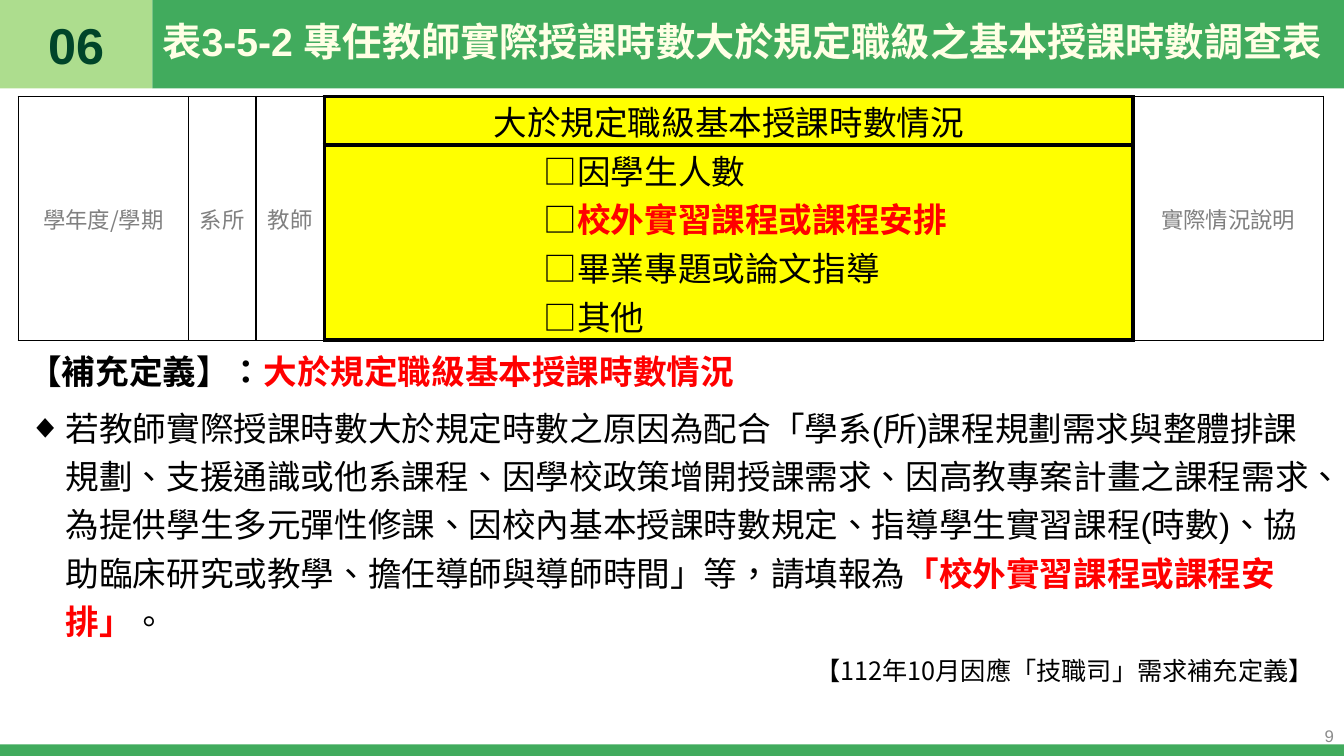
from dataclasses import dataclass
from pptx import Presentation
from pptx import util as u
from pptx.dml.color import RGBColor
from pptx.enum import shapes, text
from pptx.oxml import parse_xml
from pptx.oxml.ns import nsdecls, qn

Cm, Pt = u.Cm, u.Pt
ALIGN, ANCHOR = text.PP_ALIGN, text.MSO_ANCHOR


@dataclass(frozen=True)
class Theme:
    green: str = "41AB5D"
    pale: str = "ADDD8E"
    dark: str = "004529"
    cream: str = "FFFFE5"
    yellow: str = "FFFF00"
    red: str = "FF0000"
    black: str = "000000"
    gray: str = "808080"
    silver: str = "8C8C8C"
    latin: str = "Arial"
    cjk: str = "Noto Sans CJK SC"
    badge: int = 36
    title: int = 28
    body: int = 24
    note: int = 18
    small: int = 16
    page: int = 12


T = Theme()


def put(para, words, size, color, bold=False, face=T.cjk):
    """Add one run, with the same CJK face whatever the Latin one is."""
    run = para.add_run()
    run.text = words
    font = run.font
    font.size, font.bold, font.name = Pt(size), bold, face
    font.color.rgb = RGBColor.from_string(color)
    props = run._r.get_or_add_rPr()
    props.set("lang", "zh-TW")
    props.find(qn("a:latin")).addnext(
        parse_xml(f'<a:ea {nsdecls("a")} typeface="{T.cjk}"/>'))


def indent(para, left=0, hang=0, mark=None):
    """Set the margins in cm and the bullet sign, or none."""
    props = para._p.get_or_add_pPr()
    props.set("marL", str(Cm(left)))
    props.set("indent", str(Cm(-hang)))
    tag = f'buChar {nsdecls("a")} char="{mark}"' if mark else f'buNone {nsdecls("a")}'
    props.append(parse_xml(f"<a:{tag}/>"))


def place(shape, box, anchor):
    shape.left, shape.top, shape.width, shape.height = map(Cm, box)
    frame = shape.text_frame
    frame.word_wrap = True
    frame.auto_size = text.MSO_AUTO_SIZE.NONE
    frame.vertical_anchor = anchor
    return frame


def bar(slide, box, color, depth):
    rect = slide.shapes.add_shape(shapes.MSO_SHAPE.RECTANGLE, *map(Cm, box))
    rect.shadow.inherit = False
    rect.fill.solid()
    rect.fill.fore_color.rgb = RGBColor.from_string(color)
    rect.line.fill.background()
    slide.shapes._spTree.insert(2 + depth, rect._element)


def header(slide, box, title, badge):
    x, y, w, h = box
    left = 3.84
    tag, main = (x, y, left, h), (x + left, y, w - left, h)
    bar(slide, tag, T.pale, 0)
    bar(slide, main, T.green, 1)
    para = place(slide.shapes.title, main, ANCHOR.MIDDLE).paragraphs[0]
    para.alignment, para.line_spacing = ALIGN.LEFT, 0.9
    put(para, title, T.title, T.cream, True, T.latin)
    para = place(slide.placeholders[1], tag, ANCHOR.MIDDLE).paragraphs[0]
    para.alignment = ALIGN.CENTER
    indent(para)
    put(para, badge, T.badge, T.dark, True, T.latin)


def footer(slide, box, page):
    x, y, w, h = box
    bar(slide, box, T.green, 2)
    tall, wide = 1.02, 7.62
    area = (x + w - wide, y + h - tall, wide, tall)
    note = slide.shapes.add_textbox(*map(Cm, area))
    para = place(note, area, ANCHOR.MIDDLE).paragraphs[0]
    para.alignment = ALIGN.RIGHT
    put(para, page, T.page, T.silver, face=T.latin)


def edges(cell, widths):
    """Draw the left, right, top and bottom borders, in points."""
    props = cell._tc.get_or_add_tcPr()
    for spot, (side, width) in enumerate(zip("LRTB", widths)):
        props.insert(spot, parse_xml(
            f'<a:ln{side} {nsdecls("a")} w="{Pt(width)}"><a:solidFill>'
            f'<a:srgbClr val="{T.black}"/></a:solidFill></a:ln{side}>'))


def survey(slide, box, heads, options, key):
    """Table whose column number key is lit up and split in two rows."""
    widths, heights = (4.29, 1.7, 1.73, 20.37, 4.81), (1.22, 4.9)
    frame = slide.shapes.add_table(2, len(heads), *map(Cm, box))
    table = frame.table
    table.first_row = table.horz_banding = False
    for row, high in zip(table.rows, heights):
        row.height = Cm(high)
    for col, (head, wide) in enumerate(zip(heads, widths)):
        table.columns[col].width = Cm(wide)
        lit = col == key
        for row in range(2):
            cell = table.cell(row, col)
            cell.margin_left = cell.margin_right = Cm(0.05)
            cell.margin_top = cell.margin_bottom = 0
            cell.vertical_anchor = ANCHOR.MIDDLE
            if lit:
                cell.fill.solid()
                cell.fill.fore_color.rgb = RGBColor.from_string(T.yellow)
                edges(cell, (3, 3, 3, 3))
            else:
                cell.fill.background()
                edges(cell, (3 if col == key + 1 else 1,
                             3 if col == key - 1 else 1, 1, 1))
        top = table.cell(0, col)
        if not lit:
            top.merge(table.cell(1, col))
        para = top.text_frame.paragraphs[0]
        para.alignment = ALIGN.CENTER
        put(para, head, T.body if lit else T.small, T.black if lit else T.gray)
    body = table.cell(1, key).text_frame
    for spot, (label, hot) in enumerate(options):
        para = body.add_paragraph() if spot else body.paragraphs[0]
        indent(para, 5.47)
        put(para, "□", T.body, T.black)
        put(para, label, T.body, T.red if hot else T.black, hot)


def details(slide, box, lead, topic, reason, answer, note):
    frame = place(slide.placeholders[2], box, ANCHOR.TOP)
    first = frame.paragraphs[0]
    item, last = frame.add_paragraph(), frame.add_paragraph()
    for para, gap in ((first, 1.1), (item, 1.2), (last, 1.2)):
        para.space_before, para.line_spacing = Pt(6), gap
    indent(first)
    put(first, lead, T.body, T.black, True)
    put(first, topic, T.body, T.red, True)
    indent(item, 0.94, 0.94, "◆")
    put(item, reason, T.body, T.black, face=T.latin)
    put(item, answer, T.body, T.red, True)
    put(item, "。", T.body, T.black, face=T.latin)
    last.alignment = ALIGN.RIGHT
    indent(last)
    put(last, note, T.note, T.black)


def main():
    deck = Presentation()
    deck.slide_width, deck.slide_height = Cm(33.87), Cm(19.05)
    slide = deck.slides.add_slide(deck.slide_layouts[3])
    header(slide, (0, 0, 33.87, 2.23),
           "表3-5-2 專任教師實際授課時數大於規定職級之基本授課時數調查表", "06")
    footer(slide, (0, 18.76, 33.87, 0.29), "9")
    topic, choice = "大於規定職級基本授課時數情況", "校外實習課程或課程安排"
    survey(slide, (0.46, 2.43, 32.9, 6.12),
           ("學年度/學期", "系所", "教師", topic, "實際情況說明"),
           (("因學生人數", False), (choice, True),
            ("畢業專題或論文指導", False), ("其他", False)), 3)
    details(slide, (0.46, 8.61, 32.9, 10.44), "【補充定義】：", topic,
            "若教師實際授課時數大於規定時數之原因為配合「學系(所)課程規劃需求與整體排課規劃、"
            "支援通識或他系課程、因學校政策增開授課需求、因高教專案計畫之課程需求、"
            "為提供學生多元彈性修課、因校內基本授課時數規定、指導學生實習課程(時數)、"
            "協助臨床研究或教學、擔任導師與導師時間」等，請填報為",
            f"「{choice}」", "【112年10月因應「技職司」需求補充定義】")
    deck.save("out.pptx")


if __name__ == "__main__":
    main()
